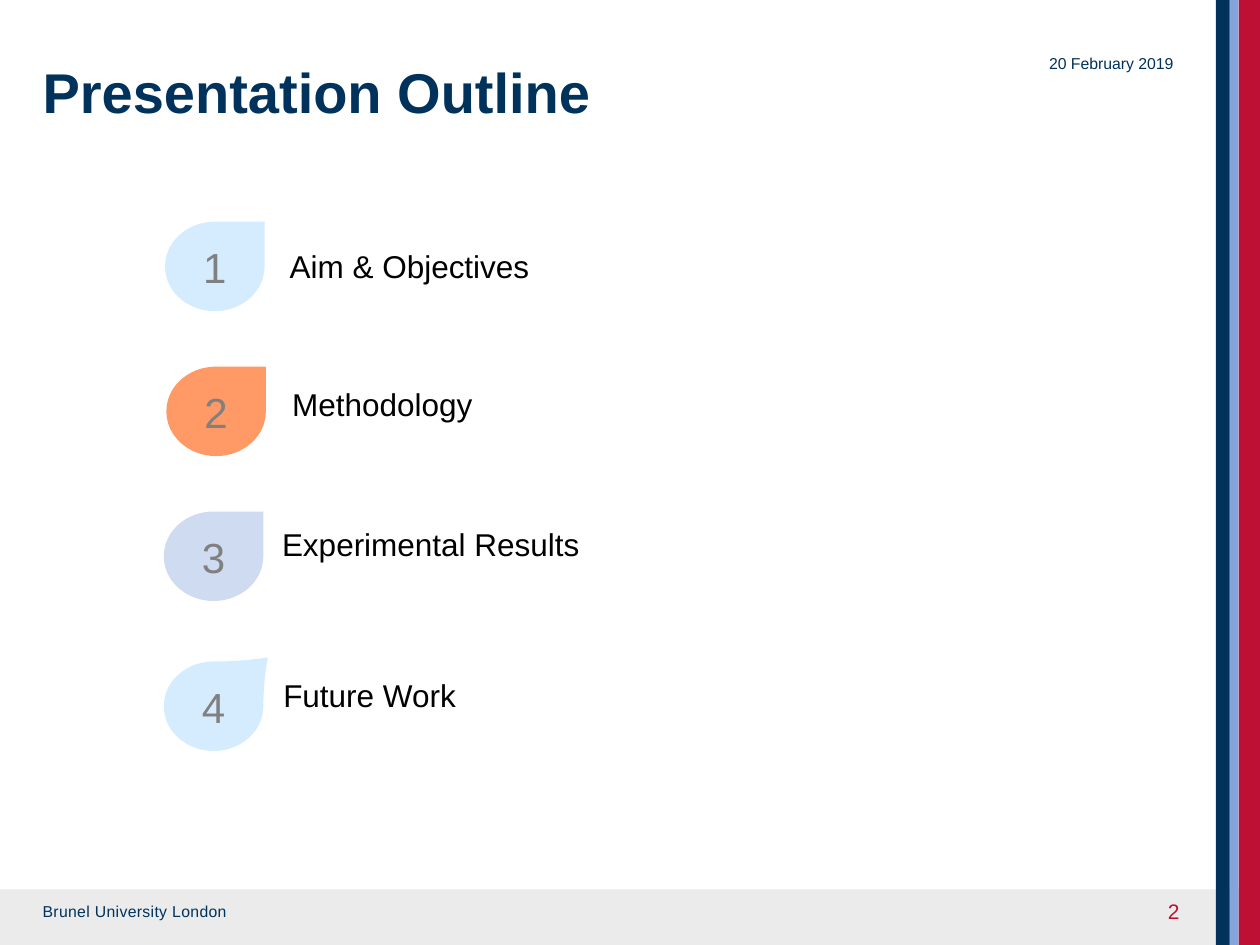
from pptx import Presentation
from pptx.dml.color import RGBColor
from pptx.enum.shapes import MSO_SHAPE as Shape
from pptx.enum.text import MSO_ANCHOR as Anchor, PP_ALIGN as Align
from pptx.util import Inches, Pt

NAVY = RGBColor(0x00, 0x32, 0x5B)
RED = RGBColor(0xBE, 0x0F, 0x34)
BLUE = RGBColor(0x84, 0xA5, 0xDC)
PALE_GREY = RGBColor(0xEB, 0xEB, 0xEB)
GREY = RGBColor(0x80, 0x80, 0x80)
BLACK = RGBColor(0x00, 0x00, 0x00)
SKY = RGBColor(0xD5, 0xEC, 0xFF)
ORANGE = RGBColor(0xFF, 0x99, 0x66)
LAVENDER = RGBColor(0xCE, 0xDB, 0xF1)

WIDTH, HEIGHT = 10, 7.5
FOOTER_HEIGHT = 0.44
DROP_WIDTH, DROP_HEIGHT = 0.79, 0.71
LABEL_HEIGHT = 0.4

# Side stripes from the right edge inwards: width, colour
STRIPES = [(0.17, RED), (0.07, BLUE), (0.11, NAVY)]

# Label, drop colour, drop (left, top), label (left, top, width), drop point
OUTLINE = [
    ("Aim & Objectives", SKY, (1.31, 1.76), (2.2, 1.91, 3.78), 1),
    ("Methodology", ORANGE, (1.32, 2.91), (2.22, 3.01, 3.78), 1),
    ("Experimental Results", LAVENDER, (1.3, 4.06), (2.14, 4.12, 3.96), 1),
    ("Future Work", SKY, (1.3, 5.25), (2.15, 5.32, 3.96), 1.09),
]


def add_filled(page, kind, area, colour):
    shape = page.shapes.add_shape(kind, *map(Inches, area))
    shape.shadow.inherit = False
    shape.fill.solid()
    shape.fill.fore_color.rgb = colour
    shape.line.fill.background()
    return shape


def write(shape, words, size, colour, align=Align.LEFT, anchor=Anchor.TOP, bold=False):
    frame = shape.text_frame
    frame.word_wrap = True
    frame.vertical_anchor = anchor
    para = frame.paragraphs[0]
    para.alignment = align
    span = para.add_run()
    span.text = words
    for name, value in {"name": "Arial", "size": Pt(size), "bold": bold}.items():
        setattr(span.font, name, value)
    span.font.color.rgb = colour
    return span


def add_text(page, area, *words, **layout):
    box = page.shapes.add_textbox(*map(Inches, area))
    return box, write(box, *words, **layout)


def add_frame(page):
    """Draw the footer band, the side stripes and the small texts."""
    footer_top = HEIGHT - FOOTER_HEIGHT
    add_filled(page, Shape.RECTANGLE, (0, footer_top, WIDTH, FOOTER_HEIGHT), PALE_GREY)
    left = WIDTH
    for width, colour in STRIPES:
        left -= width
        add_filled(page, Shape.RECTANGLE, (left, 0, width, HEIGHT), colour)

    footer, span = add_text(page, (0.24, 7.11, 1.77, 0.25), "Brunel University London", 9, NAVY)
    footer.text_frame.word_wrap = False
    span.font._element.set("spc", "20")
    right_middle = {"align": Align.RIGHT, "anchor": Anchor.MIDDLE}
    add_text(page, (7.99, 0.3, 1.42, 0.4), "20 February 2019", 9, NAVY, **right_middle)
    add_text(page, (7.13, 7.03, 2.33, 0.4), "2", 12, RED, **right_middle)


def add_outline(page):
    for number, (label, colour, corner, (left, top, width), point) in enumerate(OUTLINE, 1):
        drop = add_filled(page, Shape.TEAR, (*corner, DROP_WIDTH, DROP_HEIGHT), colour)
        drop.adjustments[0] = point
        write(drop, str(number), 24, GREY, align=Align.CENTER, anchor=Anchor.MIDDLE)
        add_text(page, (left, top, width, LABEL_HEIGHT), label, 18, BLACK)


def main():
    deck = Presentation()
    deck.slide_width, deck.slide_height = Inches(WIDTH), Inches(HEIGHT)
    page = deck.slides.add_slide(deck.slide_layouts[6])
    add_frame(page)
    title, _ = add_text(page, (0.24, 0.36, 9.1, 1.25), "Presentation Outline", 32, NAVY, bold=True)
    title.text_frame.margin_top = Inches(0.1)
    add_outline(page)
    deck.save("out.pptx")


if __name__ == "__main__":
    main()
